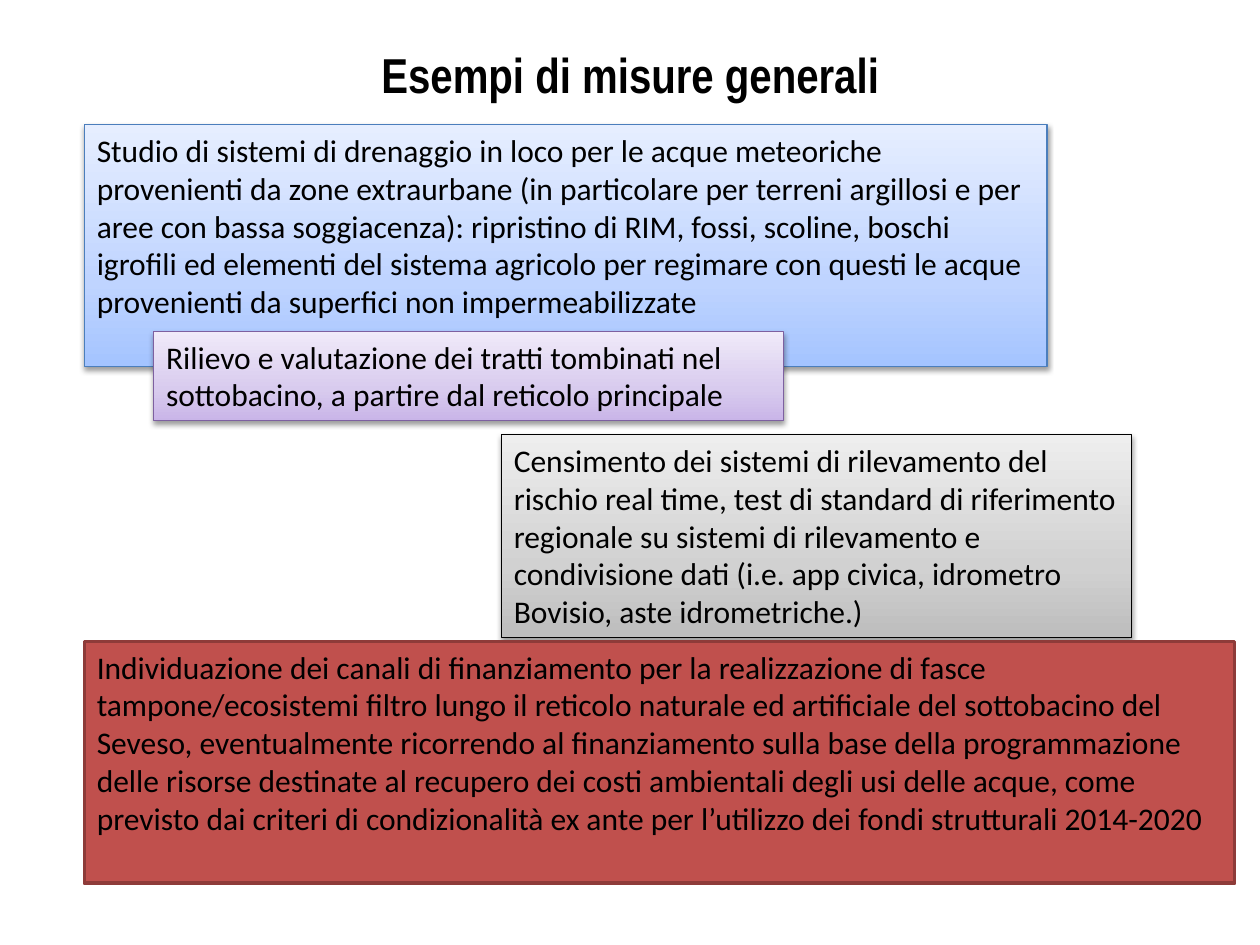
from copy import deepcopy

from lxml.etree import SubElement
from pptx import Presentation
from pptx.dml.color import RGBColor
from pptx.enum.shapes import MSO_SHAPE
from pptx.enum.text import MSO_ANCHOR, PP_ALIGN
from pptx.oxml.ns import qn
from pptx.util import Inches, Pt

COLORS = {
    "text": "000000",
    "blue": ("A4C4FF", "BFD4FF", "E6EEFF"), "blue_line": "4B7EBC",
    "purple": ("C9B5E8", "D8CBEE", "F0EAF9"), "purple_line": "7D60A0",
    "gray": ("BDBDBD", "D1D1D1", "EEEEEE"), "gray_line": "000000",
    "red": "C0504D", "red_line": "8E3B39",
}
STOPS = (0, 0.35, 1)
TITLE = "Esempi di misure generali"
MEASURES = [
    ("blue", (0.67, 0.99, 7.64, 1.92),
     "Studio di sistemi di drenaggio in loco per le acque meteoriche provenienti da zone "
     "extraurbane (in particolare per terreni argillosi e per aree con bassa soggiacenza): "
     "ripristino di RIM, fossi, scoline, boschi igrofili ed elementi del sistema agricolo "
     "per regimare con questi le acque provenienti da superfici non impermeabilizzate"),
    ("purple", (1.22, 2.63, 5, 0.71),
     "Rilievo e valutazione dei tratti tombinati nel sottobacino, a partire dal reticolo "
     "principale"),
    ("gray", (3.98, 3.45, 5, 1.61),
     "Censimento dei sistemi di rilevamento del rischio real time, test di standard di "
     "riferimento regionale su sistemi di rilevamento e condivisione dati (i.e. app civica, "
     "idrometro Bovisio, aste idrometriche.)"),
    ("red", (0.67, 5.09, 9.13, 1.92),
     "Individuazione dei canali di finanziamento per la realizzazione di fasce "
     "tampone/ecosistemi filtro lungo il reticolo naturale ed artificiale del sottobacino del "
     "Seveso, eventualmente ricorrendo al finanziamento sulla base della programmazione delle "
     "risorse destinate al recupero dei costi ambientali degli usi delle acque, come previsto "
     "dai criteri di condizionalità ex ante per l’utilizzo dei fondi strutturali 2014-2020"),
]


def rgb(value):
    return RGBColor.from_string(value)


def write(tf, text, font, size, align, bold=False):
    tf.word_wrap = True
    tf.vertical_anchor = MSO_ANCHOR.TOP
    p = tf.paragraphs[0]
    p.alignment = align
    r = p.add_run()
    r.text = text
    r.font.name = font
    r.font.size = Pt(size)
    r.font.bold = bold
    r.font.color.rgb = rgb(COLORS["text"])


def fill_gradient(sp, colors):
    sp.fill.gradient()
    sp.fill.gradient_angle = 90
    first = sp._element.spPr.find(".//" + qn("a:gs"))
    first.addnext(deepcopy(first))
    for stop, position, color in zip(sp.fill.gradient_stops, STOPS, colors):
        stop.position = position
        stop.color.rgb = rgb(color)


def add_shadow(sp):
    effects = sp._element.spPr.find(qn("a:effectLst"))
    shadow = SubElement(effects, qn("a:outerShdw"), blurRad=str(Pt(3.1)), dist=str(Pt(1.6)),
                        dir="5400000", rotWithShape="0")
    color = SubElement(shadow, qn("a:srgbClr"), val="000000")
    SubElement(color, qn("a:alpha"), val="38000")


def add_measure(s, name, box, text):
    sp = s.shapes.add_shape(MSO_SHAPE.RECTANGLE, *map(Inches, box))
    sp.shadow.inherit = False
    sp.line.color.rgb = rgb(COLORS[name + "_line"])
    if name == "red":
        sp.fill.solid()
        sp.fill.fore_color.rgb = rgb(COLORS[name])
        sp.line.width = Pt(2)
    else:
        fill_gradient(sp, COLORS[name])
        sp.line.width = Pt(0.75)
        add_shadow(sp)
    write(sp.text_frame, text, "Calibri", 18, PP_ALIGN.LEFT)


def main():
    prs = Presentation()
    prs.slide_width, prs.slide_height = Inches(10), Inches(7.5)
    s = prs.slides.add_slide(prs.slide_layouts[5])
    title = s.shapes.title
    title.left, title.top, title.width, title.height = map(Inches, (0.5, 0.3, 9, 1.25))
    write(title.text_frame, TITLE, "Arial Narrow", 28, PP_ALIGN.CENTER, bold=True)
    for measure in MEASURES:
        add_measure(s, *measure)
    prs.save("out.pptx")


if __name__ == "__main__":
    main()
